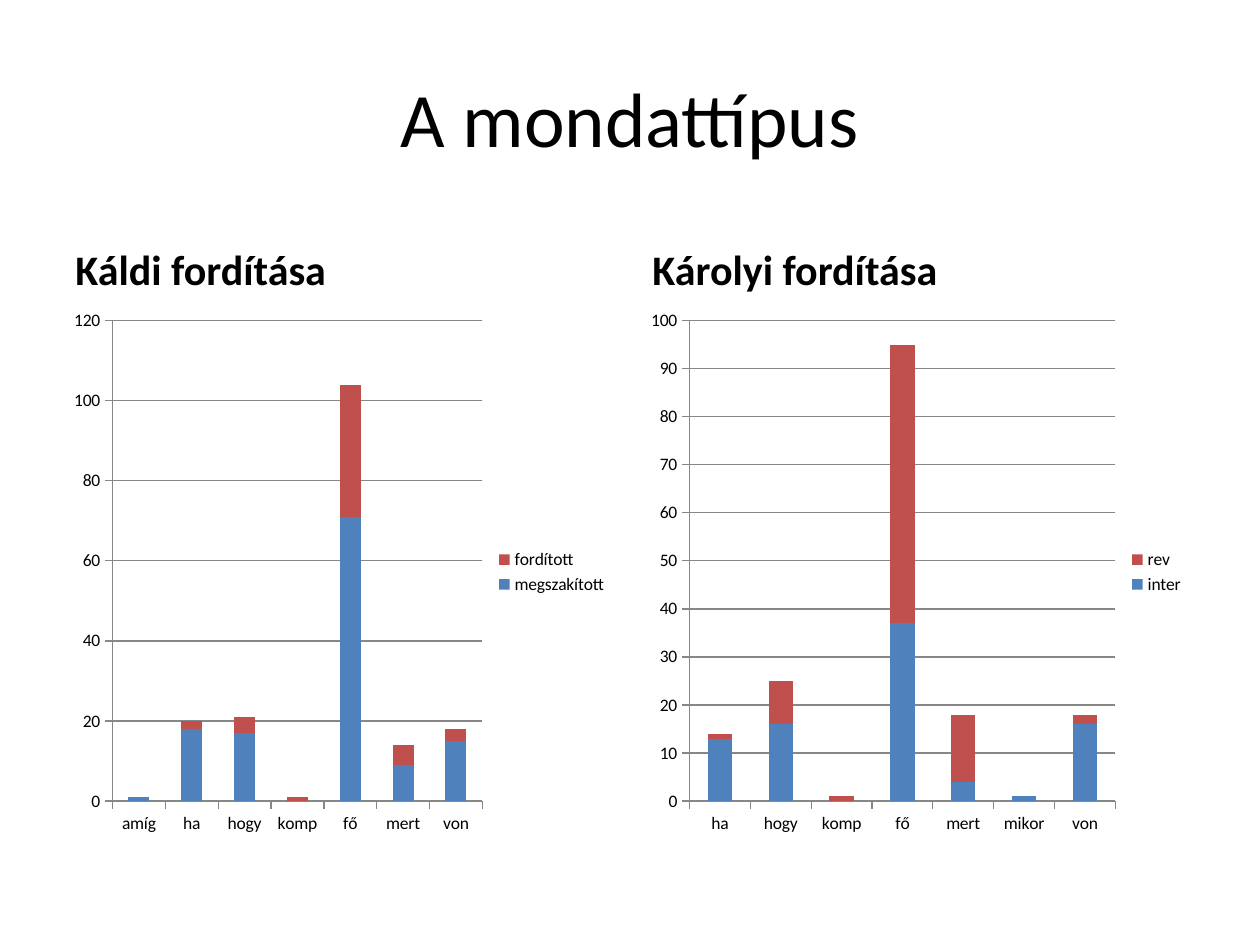
"""Build a slide comparing sentence types in two translations with stacked column charts."""
from pptx import Presentation
from pptx.chart.data import CategoryChartData
from pptx.dml.color import RGBColor
from pptx.enum.chart import XL_CHART_TYPE, XL_LEGEND_POSITION, XL_TICK_MARK
from pptx.enum.text import MSO_ANCHOR, PP_ALIGN
from pptx.util import Inches, Pt

THEME = {
    "font": "Calibri",
    "text": RGBColor.from_string("000000"),
    "line": RGBColor.from_string("878787"),
    "series": [RGBColor.from_string("4F81BD"), RGBColor.from_string("C0504D")],
    "title": Pt(44),
    "heading": Pt(24),
    "chart": Pt(10),
}

TRANSLATIONS = [
    {
        "heading": "Káldi fordítása",
        "categories": ["amíg", "ha", "hogy", "komp", "fő", "mert", "von"],
        "series": {
            "megszakított": [1, 18, 17, 0, 71, 9, 15],
            "fordított": [0, 2, 4, 1, 33, 5, 3],
        },
        "maximum": 120,
        "step": 20,
    },
    {
        "heading": "Károlyi fordítása",
        "categories": ["ha", "hogy", "komp", "fő", "mert", "mikor", "von"],
        "series": {
            "inter": [13, 16, 0, 37, 4, 1, 16],
            "rev": [1, 9, 1, 58, 14, 0, 2],
        },
        "maximum": 100,
        "step": 10,
    },
]

presentation = Presentation()
presentation.slide_width = Inches(10)
presentation.slide_height = Inches(7.5)
slide = presentation.slides.add_slide(presentation.slide_layouts[6])

margin = Inches(0.5)
gutter = Inches(0.16)
content_width = presentation.slide_width - 2 * margin
column_width = (content_width - gutter) // 2
title_top, title_height = Inches(0.3), Inches(1.25)
heading_top, heading_height = Inches(1.68), Inches(0.7)
chart_top, chart_height = heading_top + heading_height, Inches(4.32)


def add_text(text, left, top, width, height, size, anchor, alignment, bold):
    """Add one line of text in a wrapping box."""
    text_frame = slide.shapes.add_textbox(left, top, width, height).text_frame
    text_frame.text = text
    text_frame.word_wrap = True
    text_frame.vertical_anchor = anchor
    paragraph = text_frame.paragraphs[0]
    paragraph.alignment = alignment
    font = paragraph.runs[0].font
    font.name, font.size, font.bold = THEME["font"], size, bold
    font.color.rgb = THEME["text"]


add_text("A mondattípus", margin, title_top, content_width, title_height,
         THEME["title"], MSO_ANCHOR.MIDDLE, PP_ALIGN.CENTER, False)

for column, translation in enumerate(TRANSLATIONS):
    left = margin + column * (column_width + gutter)
    add_text(translation["heading"], left, heading_top, column_width, heading_height,
             THEME["heading"], MSO_ANCHOR.BOTTOM, PP_ALIGN.LEFT, True)

    chart_data = CategoryChartData()
    chart_data.categories = translation["categories"]
    for name, values in translation["series"].items():
        chart_data.add_series(name, values)
    chart = slide.shapes.add_chart(
        XL_CHART_TYPE.COLUMN_STACKED, left, chart_top, column_width, chart_height, chart_data
    ).chart

    chart.has_title = False
    chart.font.name = THEME["font"]
    chart.font.size = THEME["chart"]
    chart.font.color.rgb = THEME["text"]
    chart.has_legend = True
    chart.legend.position = XL_LEGEND_POSITION.RIGHT
    chart.legend.include_in_layout = False

    plot = chart.plots[0]
    plot.gap_width = 150
    plot.overlap = 100
    plot.vary_by_categories = False
    for series, color in zip(plot.series, THEME["series"]):
        series.format.fill.solid()
        series.format.fill.fore_color.rgb = color

    value_axis = chart.value_axis
    value_axis.minimum_scale = 0
    value_axis.maximum_scale = translation["maximum"]
    value_axis.major_unit = translation["step"]
    value_axis.has_major_gridlines = True
    for axis in (chart.category_axis, value_axis):
        axis.major_tick_mark = XL_TICK_MARK.OUTSIDE
        axis.minor_tick_mark = XL_TICK_MARK.NONE
    for line_owner in (chart.category_axis, value_axis, value_axis.major_gridlines):
        line_owner.format.line.color.rgb = THEME["line"]
        line_owner.format.line.width = Pt(0.75)

presentation.save("out.pptx")
